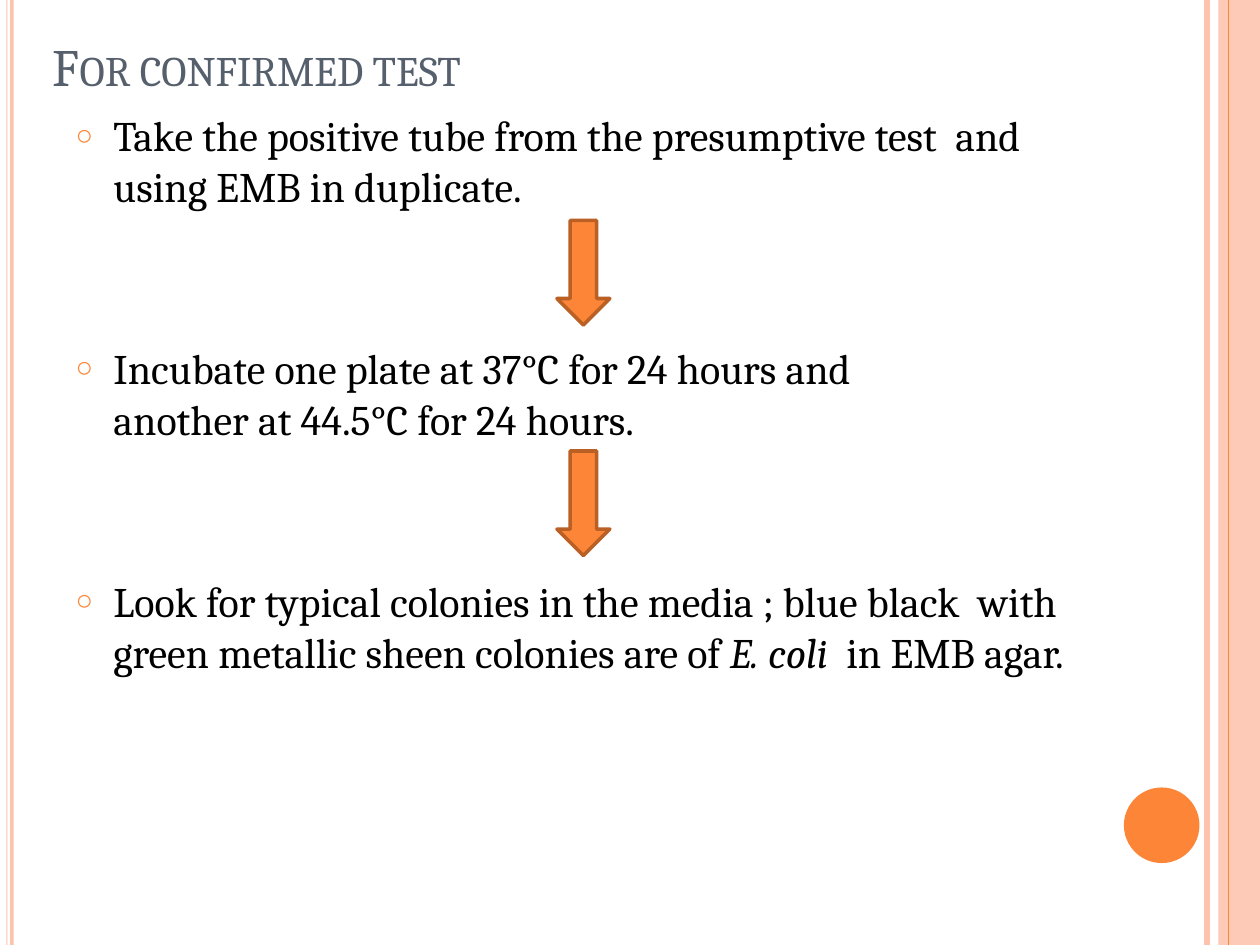
from dataclasses import dataclass

from lxml import etree
from pptx import Presentation
from pptx.dml.color import RGBColor as RGB
from pptx.enum.shapes import MSO_CONNECTOR as CONN, MSO_SHAPE as SHAPE
from pptx.enum.text import MSO_ANCHOR as ANCHOR, MSO_AUTO_SIZE as AUTO, PP_ALIGN as ALIGN
from pptx.oxml.ns import qn
from pptx.util import Inches, Pt


@dataclass(frozen=True)
class Theme:
    font: str = "Cambria"
    title: str = "565F6C"
    text: str = "000000"
    accent: str = "FD8537"
    outline: str = "BA6025"
    pale: str = "FDC3AD"
    cap_size: float = 30
    size: float = 24
    leading: float = 29
    step_gap: float = 75


class Deck:
    def __init__(self, theme):
        self.theme = theme
        self.prs = Presentation()
        self.prs.slide_width, self.prs.slide_height = Inches(10), Inches(7.5)
        self.slide = self.prs.slides.add_slide(self.prs.slide_layouts[1])

    def shape(self, kind, x, y, w, h, color, outline=None, alpha=None):
        s = self.slide.shapes.add_shape(kind, Inches(x), Inches(y), Inches(w), Inches(h))
        s.shadow.inherit = False
        s.fill.solid()
        s.fill.fore_color.rgb = RGB.from_string(color)
        if alpha:
            clr = s.fill._xPr.find(".//" + qn("a:srgbClr"))
            etree.SubElement(clr, qn("a:alpha"), val=str(alpha * 1000))
        if outline:
            s.line.color.rgb = RGB.from_string(outline)
            s.line.width = Pt(2.04)
        else:
            s.line.fill.background()

    def vline(self, x, color, width):
        s = self.slide.shapes.add_connector(
            CONN.STRAIGHT, Inches(x), 0, Inches(x), self.prs.slide_height)
        s.line.color.rgb = RGB.from_string(color)
        s.line.width = Pt(width)
        etree.SubElement(s._element.spPr, qn("a:effectLst"))

    def frame(self, sp, x, y, w, h):
        sp.left, sp.top, sp.width, sp.height = Inches(x), Inches(y), Inches(w), Inches(h)
        tf = sp.text_frame
        tf.margin_left = tf.margin_right = tf.margin_bottom = 0
        tf.margin_top = Inches(0.01)
        tf.word_wrap = True
        tf.auto_size = AUTO.NONE
        tf.vertical_anchor = ANCHOR.TOP
        return tf

    def run(self, p, text, size, color, italic=False):
        r = p.add_run()
        r.text = text
        r.font.name = self.theme.font
        r.font.size = Pt(size)
        r.font.italic = italic
        r.font.color.rgb = RGB.from_string(color)

    def title(self, cap, rest, *box):
        t = self.theme
        p = self.frame(self.slide.shapes.title, *box).paragraphs[0]
        p.alignment = ALIGN.LEFT
        self.run(p, cap, t.cap_size, t.title)
        self.run(p, rest, t.size, t.title)

    def bullet(self, p):
        pPr = p._p.get_or_add_pPr()
        pPr.set("marL", str(Inches(0.31)))
        pPr.set("indent", str(Inches(-0.3)))
        clr = etree.SubElement(pPr, qn("a:buClr"))
        etree.SubElement(clr, qn("a:srgbClr"), val=self.theme.accent)
        etree.SubElement(pPr, qn("a:buSzPct"), val="69000")
        etree.SubElement(pPr, qn("a:buChar"), char="○")

    def steps(self, items, *box):
        t = self.theme
        tf = self.frame(self.slide.placeholders[1], *box)
        for i, lines in enumerate(items):
            p = tf.add_paragraph() if i else tf.paragraphs[0]
            p.alignment = ALIGN.LEFT
            p.line_spacing = Pt(t.leading)
            p.space_before = Pt(t.step_gap if i else 0)
            self.bullet(p)
            for j, runs in enumerate(lines):
                if j:
                    p.add_line_break()
                for text, italic in runs:
                    self.run(p, text, t.size, t.text, italic)


def main():
    t = Theme()
    deck = Deck(t)
    deck.vline(9.58, t.pale, 3)
    deck.shape(SHAPE.OVAL, 8.92, 6.25, 0.6, 0.6, t.accent)
    for x, w, alpha in ((0.05, 0.01, None), (0.08, 0.03, None), (9.67, 0.33, 87)):
        deck.shape(SHAPE.RECTANGLE, x, 0, w, 7.5, t.pale, alpha=alpha)
    deck.vline(9.75, t.accent, 0.72)

    deck.title("F", "OR CONFIRMED TEST", 0.42, 0.26, 4.12, 0.53)
    deck.steps([
        [[("Take the positive tube from the presumptive test  and using EMB in duplicate.", False)]],
        [[("Incubate one plate at 37°C for 24 hours and", False)],
         [("another at 44.5°C for 24 hours.", False)]],
        [[("Look for typical colonies in the media ; blue black  with "
           "green metallic sheen colonies are of ", False),
          ("E. coli  ", True), ("in EMB agar.", False)]],
    ], 0.59, 0.86, 7.91, 4.94)
    for y in (1.75, 3.58):
        deck.shape(SHAPE.DOWN_ARROW, 4.42, y, 0.42, 0.83, t.accent, t.outline)
    deck.prs.save("out.pptx")


if __name__ == "__main__":
    main()
